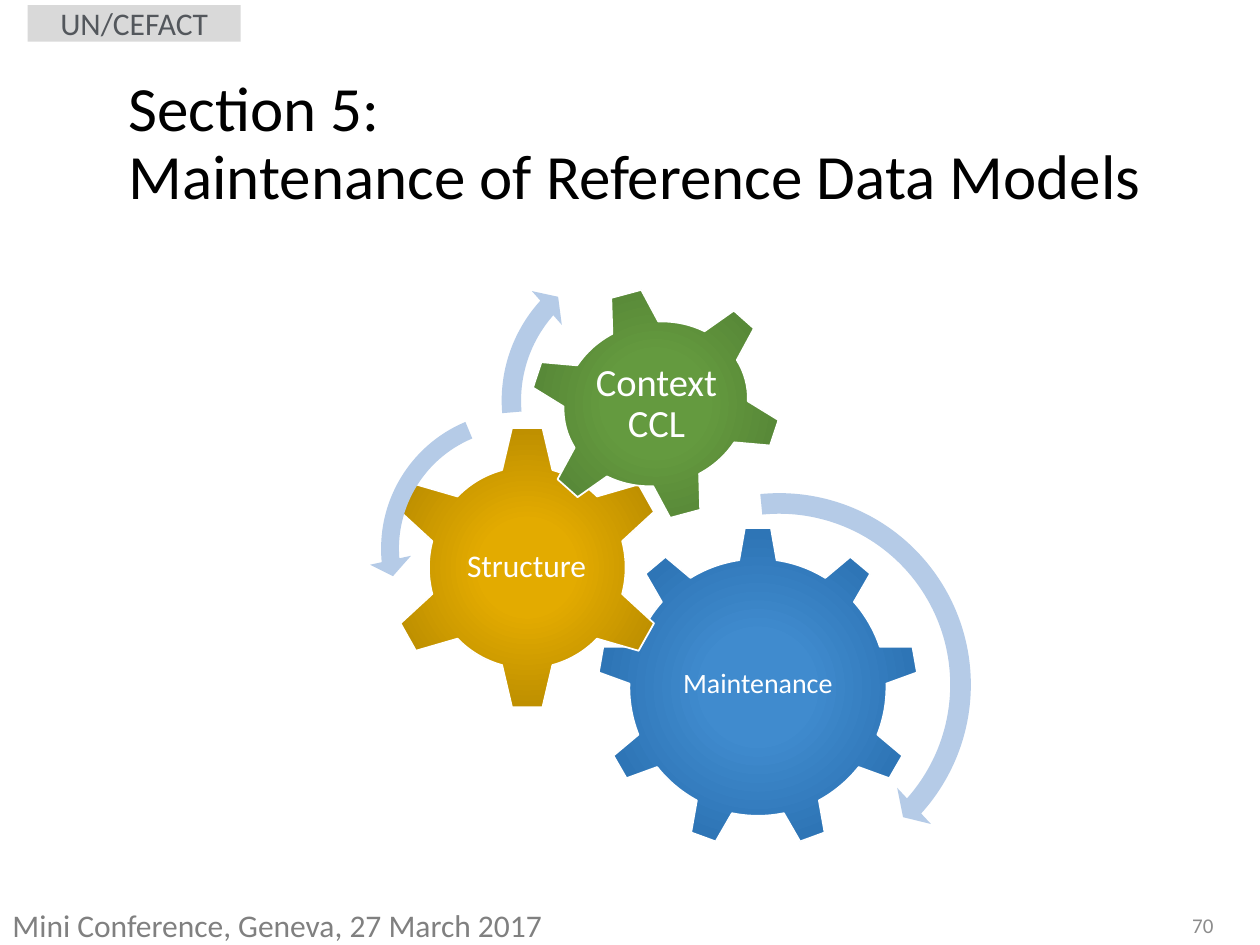
from lxml.etree import SubElement
from pptx import Presentation
from pptx.dml.color import RGBColor
from pptx.enum.shapes import MSO_SHAPE
from pptx.enum.text import MSO_ANCHOR, MSO_AUTO_SIZE, PP_ALIGN
from pptx.oxml.ns import qn
from pptx.util import Inches, Pt

BLACK = RGBColor(0x00, 0x00, 0x00)
WHITE = RGBColor(0xFF, 0xFF, 0xFF)
LABEL_FILL = RGBColor(0xD9, 0xD9, 0xD9)
LABEL_TEXT = RGBColor(0x53, 0x57, 0x5C)
NUMBER_GRAY = RGBColor(0x8C, 0x8C, 0x8C)
FOOTER_GRAY = RGBColor(0x80, 0x80, 0x80)
ARROW_BLUE = RGBColor(0xB5, 0xCB, 0xE7)

# Gear shades from the centre outwards
SHADE_POSITIONS = (0, 23, 69, 97)
BLUES = [RGBColor.from_string(c) for c in ("408BCE", "408BCE", "2E75B6", "2B6DA9")]
GOLDS = [RGBColor.from_string(c) for c in ("E3AB00", "E3AB00", "BF9000", "B28600")]
GREENS = [RGBColor.from_string(c) for c in ("649A3F", "649A3F", "548235", "4E7932")]

COLUMNS, ROWS = 100, 75
SLIDE_WIDTH, SLIDE_HEIGHT = Inches(10), Inches(7.5)


class SlideBuilder:
    """Holds the font and the current slide; boxes are in grid columns and rows."""

    font_name = "Calibri"

    def __init__(self, presentation):
        self.slide = presentation.slides.add_slide(presentation.slide_layouts[5])

    def box(self, left, top, width, height):
        column, row = SLIDE_WIDTH / COLUMNS, SLIDE_HEIGHT / ROWS
        return [round(n) for n in (left * column, top * row, width * column, height * row)]

    def fill_text(self, shape, text, size, color, align=PP_ALIGN.LEFT,
                  anchor=MSO_ANCHOR.MIDDLE, spacing=1.0, inset=None):
        frame = shape.text_frame
        frame.text = text
        frame_format = {"word_wrap": True, "auto_size": MSO_AUTO_SIZE.NONE,
                        "vertical_anchor": anchor}
        if inset is not None:
            for side in ("left", "right", "top", "bottom"):
                frame_format["margin_" + side] = Inches(inset)
        for name, value in frame_format.items():
            setattr(frame, name, value)
        for paragraph in frame.paragraphs:
            paragraph.alignment = align
            paragraph.line_spacing = spacing
            for run in paragraph.runs:
                for name, value in {"name": self.font_name, "size": Pt(size)}.items():
                    setattr(run.font, name, value)
                run.font.color.rgb = color

    def title(self, box, text, size):
        shape = self.slide.shapes.title
        for name, value in zip(("left", "top", "width", "height"), self.box(*box)):
            setattr(shape, name, value)
        self.fill_text(shape, text, size, BLACK, spacing=0.9)

    def text(self, box, text, size, color, **layout):
        shape = self.slide.shapes.add_textbox(*self.box(*box))
        self.fill_text(shape, text, size, color, **layout)

    def shape(self, kind, box, fill=None):
        shape = self.slide.shapes.add_shape(kind, *self.box(*box))
        shape.shadow.inherit = False
        shape.line.fill.background()
        if fill is not None:
            shape.fill.solid()
            shape.fill.fore_color.rgb = fill
        return shape

    def label(self, box, text, size):
        shape = self.shape(MSO_SHAPE.RECTANGLE, box, LABEL_FILL)
        self.fill_text(shape, text, size, LABEL_TEXT, align=PP_ALIGN.CENTER)

    def gear(self, kind, box, shades, text_box, text, size, rotation=0):
        shape = self.shape(kind, box)
        shape.rotation = rotation
        shape.line.color.rgb = WHITE
        shape.line.width = Pt(1)
        self.radial_fill(shape, shades)
        self.text(text_box, text, size, WHITE, align=PP_ALIGN.CENTER,
                  spacing=0.9, inset=0.03)

    def radial_fill(self, shape, shades):
        shape.fill.gradient()
        gradient = shape._element.spPr.find(qn("a:gradFill"))
        gradient.clear()
        stops = SubElement(gradient, qn("a:gsLst"))
        for position, color in zip(SHADE_POSITIONS, shades):
            stop = SubElement(stops, qn("a:gs"), pos=str(position * 1000))
            SubElement(stop, qn("a:srgbClr"), val=str(color))
        circle = SubElement(gradient, qn("a:path"), path="circle")
        SubElement(circle, qn("a:fillToRect"), l="50000", t="50000", r="50000", b="50000")

    def arrow(self, kind, box, adjustments):
        shape = self.shape(kind, box, ARROW_BLUE)
        for index, value in enumerate(adjustments):
            shape.adjustments[index] = value


def main():
    presentation = Presentation()
    presentation.slide_width = SLIDE_WIDTH
    presentation.slide_height = SLIDE_HEIGHT
    builder = SlideBuilder(presentation)

    # Header and title
    builder.label((2.2, 0.4, 16.9, 2.9), "UN/CEFACT", 18)
    builder.title((9.2, 8, 88.1, 7), "Section 5: \vMaintenance of Reference Data Models", 36)

    # Slide number
    builder.text((67.3, 71.4, 30, 4), "70", 12, NUMBER_GRAY, align=PP_ALIGN.RIGHT)

    # Interlocking gears
    builder.gear(MSO_SHAPE.GEAR_9, (47.4, 41.8, 25.5, 25.5), BLUES,
                 (52.5, 47.8, 15.3, 13.1), "Maintenance", 16)
    builder.gear(MSO_SHAPE.GEAR_6, (30.7, 33.7, 22.3, 22.7), GOLDS,
                 (36.3, 39.4, 11, 11.3), "Structure", 18)
    builder.gear(MSO_SHAPE.GEAR_6, (41.9, 22.8, 20.3, 18.5), GREENS,
                 (46.5, 26.8, 11.2, 10.6), "Context CCL", 22, rotation=345)

    # Arrows showing the turning direction
    builder.arrow(MSO_SHAPE.CIRCULAR_ARROW, (45.5, 38, 32.7, 32.7),
                  (0.05, 2.99, 25.17, 158.59, 0.06))
    builder.arrow(MSO_SHAPE.LEFT_CIRCULAR_ARROW, (29.3, 31.7, 23.7, 23.7),
                  (0.06, 4.3, 104.89, 148.38, 0.07))
    builder.arrow(MSO_SHAPE.CIRCULAR_ARROW, (38.8, 19, 25.6, 25.6),
                  (0.06, 3.94, 133.14, 105.08, 0.07))

    # Footer
    builder.text((0, 71.4, 56.8, 4), "Mini Conference, Geneva, 27 March 2017", 18,
                 FOOTER_GRAY, anchor=MSO_ANCHOR.TOP)

    presentation.save("out.pptx")


if __name__ == "__main__":
    main()
